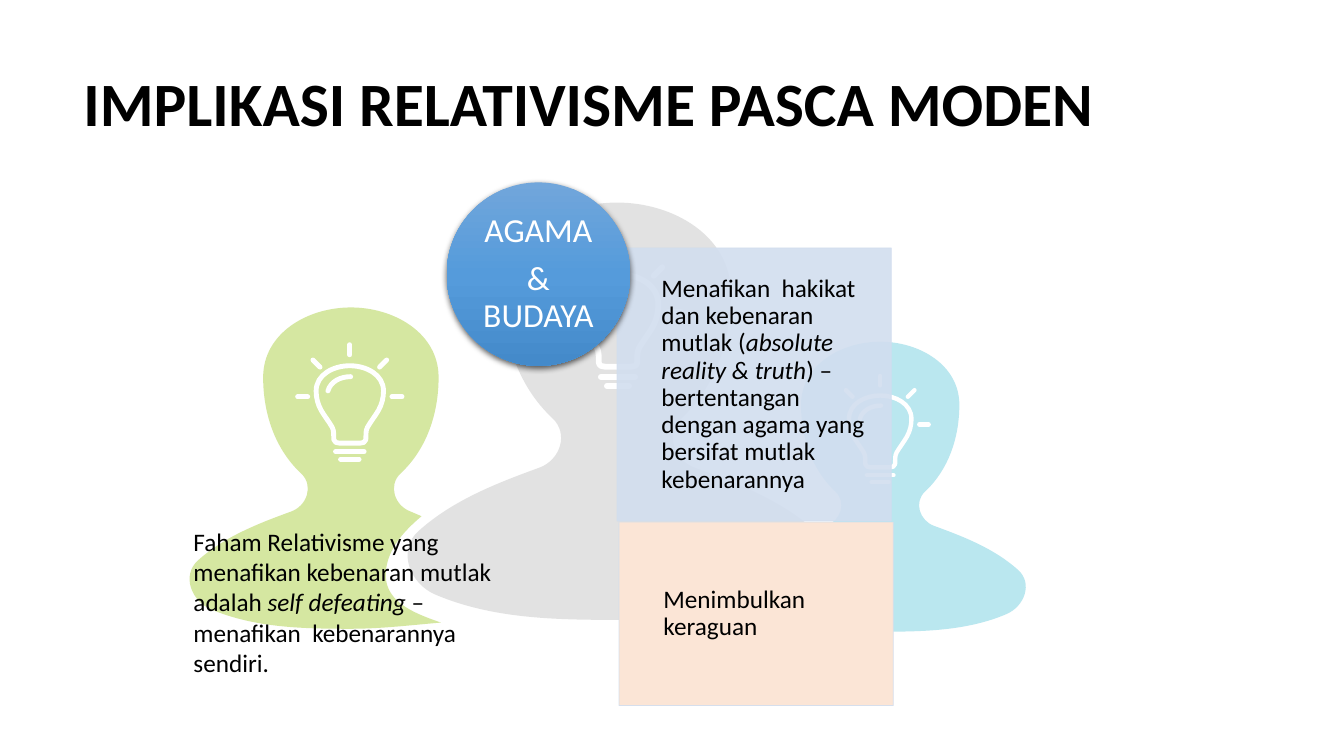
"""Build the slide on the effects of postmodern relativism."""
from math import atan2, cos, hypot, pi, radians, sin
from lxml import etree
from pptx import Presentation
from pptx.dml.color import RGBColor
from pptx.enum.shapes import MSO_SHAPE
from pptx.enum.text import MSO_ANCHOR, PP_ALIGN
from pptx.oxml import parse_xml
from pptx.oxml.ns import qn
from pptx.util import Inches, Pt

RECT, OVAL = MSO_SHAPE.RECTANGLE, MSO_SHAPE.OVAL
TOP, MID = MSO_ANCHOR.TOP, MSO_ANCHOR.MIDDLE
LEFT, CENTER = PP_ALIGN.LEFT, PP_ALIGN.CENTER
FONT = "Calibri"
NS = 'xmlns:a="http://schemas.openxmlformats.org/drawingml/2006/main"'
COLORS = {"black": "000000", "white": "FFFFFF", "gray": "3F3F3F",
          "teal": "00A8C6", "green": "8FBE00", "blue": "D2DEEF",
          "peach": "FBE5D6", "light": "71A6DB", "middle": "559BDB",
          "deep": "448ACA"}
HUES = {name: RGBColor.from_string(code) for name, code in COLORS.items()}

deck = Presentation()
deck.slide_width, deck.slide_height = Inches(13.33), Inches(7.5)
slide = deck.slides.add_slide(deck.slide_layouts[6])
shapes = slide.shapes


def trace(outlines, mid, top, scale, side=1, hue=None, clear=100, width=None):
    """Join (x, y, heading) knots by arcs, and strands by straight lines."""
    steps = []
    for strands in outlines:
        for i, strand in enumerate(strands):
            steps.append(("lnTo" if i else "moveTo", [strand[0][:2]]))
            for (x, y, head), (u, v, turn) in zip(strand, strand[1:]):
                start, end = radians(head), radians(turn)
                bend = (end - start + pi) % (2 * pi) - pi
                reach = hypot(u - x, v - y) / (3 * cos(bend / 4) ** 2)
                steps.append(("cubicBezTo", [
                    (x + reach * cos(start), y + reach * sin(start)),
                    (u - reach * cos(end), v - reach * sin(end)), (u, v)]))
        if strands[0][0][:2] == strands[-1][-1][:2]:
            steps.append(("close", []))
    steps = [(tag, [(Inches(mid + side * x * scale), Inches(top + y * scale))
                    for x, y in points]) for tag, points in steps]
    spots = [spot for tag, points in steps for spot in points]
    pen = shapes.build_freeform(*spots[0], scale=1.0)
    pen.add_line_segments(spots[1:])
    form = pen.convert_to_shape()
    form.shadow.inherit = False
    if hue:
        form.fill.solid()
        form.fill.fore_color.rgb = HUES[hue]
        tint = form._element.spPr.find(".//" + qn("a:srgbClr"))
        etree.SubElement(tint, qn("a:alpha"), val=str(clear * 1000))
        form.line.fill.background()
    else:
        form.fill.background()
        form.line.width = Pt(width)
        form.line.color.rgb = HUES["white"]
        form.line._ln.set("cap", "rnd")
    track = form._element.spPr.find(".//" + qn("a:path"))
    for old in list(track):
        track.remove(old)
    for tag, points in steps:
        step = etree.SubElement(track, qn("a:" + tag))
        for x, y in points:
            etree.SubElement(step, qn("a:pt"), x=str(x - form.left),
                             y=str(y - form.top))


def write(box, paras, size, hue="black", bold=False, anchor=MID,
          align=LEFT, pad=(0.1, 0.05, 0.1, 0.05), pitch=0.9, after=0):
    frame = shapes.add_textbox(*map(Inches, box)).text_frame
    frame.word_wrap = True
    frame.vertical_anchor = anchor
    (frame.margin_left, frame.margin_top,
     frame.margin_right, frame.margin_bottom) = map(Inches, pad)
    for i, runs in enumerate(paras):
        para = frame.add_paragraph() if i else frame.paragraphs[0]
        para.alignment, para.line_spacing = align, pitch
        para.space_after = Pt(size * after)
        for text, slant in runs:
            run = para.add_run()
            run.text = text
            run.font.name, run.font.size = FONT, Pt(size)
            run.font.bold, run.font.italic = bold, slant
            run.font.color.rgb = HUES[hue]


crown, temple, jaw = (0, 0, 0), (1.13, 0.9, 90), (0.64, 2.14, 137)
collar, arm = (0.77, 2.63, 20), (1.97, 3.26, 42)
elbow, hem = (1.8, 3.89, 157), (0, 4.14, 180)
head = [crown, temple, jaw, collar]
half = head + [arm, elbow, hem]
back = [(-x, y, -turn) for x, y, turn in reversed(half)]

gray_body = [half + back[1:]]
teal_body, green_body = [
    [head, [(*high, 140), (*deep, 88), (*low, 19)], [(*low, 175), *back]]
    for high, deep, low in [((0.81, 2.65), (0.48, 3.32), (1.21, 4.06)),
                            ((0.91, 2.69), (0.45, 3.47), (1.16, 4.06))]]
for body, mid, top, scale, side, hue, clear in [
        (gray_body, 6.12, 2.01, 1, 1, "gray", 15),
        (teal_body, 8.73, 3.39, 0.695, -1, "teal", 27),
        (green_body, 3.48, 3.05, 0.77, 1, "green", 37)]:
    trace([body], mid, top, scale, side, hue, clear)

dome, bulge, taper = (0, 0.25, 0), (0.4, 0.55, 90), (0.34, 0.78, 120)
throat, screw, foot = (0.21, 0.98, 120), (0.19, 1.13, 95), (0.12, 1.17, 180)
glass = [dome, bulge, taper, throat, screw, foot]
glass += [(-x, y, -turn) for x, y, turn in reversed(glass)]
shine = [(0.01, 0.38, 180), (-0.26, 0.55, 105)]
CORE, INNER, OUTER = 0.62, 0.5, 0.62
rays = [[(r * cos(radians(turn)), CORE + r * sin(radians(turn)), turn)
         for r in (INNER, OUTER)] for turn in range(-180, 1, 45)]
bars = [[(-x, y, 0), (x, y, 0)] for x, y in ((0.17, 1.27), (0.11, 1.36))]
bulb = [[strand] for strand in [glass, shine, *rays, *bars]]
for mid, top, scale, width in [(6.13, 2.47, 1, 4.13), (8.73, 3.73, 0.775, 3.13),
                               (3.47, 3.42, 0.835, 3.5)]:
    trace(bulb, mid, top, scale, width=width)

write((0.73, 0.36, 11.4, 1.4),
      [[("IMPLIKASI RELATIVISME PASCA MODEN", False)]], 44, bold=True)

WIDE, INDENT = 2.72, 0.44
cards = [(6.12, 2.46, 2.71, "blue", 90,
          [("Menafikan  hakikat dan kebenaran mutlak (", False),
           ("absolute reality & truth", True),
           (") – bertentangan dengan agama yang bersifat mutlak kebenarannya",
            False)]),
         (6.14, 5.18, 1.82, "peach", 100, [("Menimbulkan keraguan", False)])]
for left, top, tall, hue, clear, runs in cards:
    card = shapes.add_shape(RECT, *map(Inches, (left, top, WIDE, tall)))
    card.shadow.inherit = False
    card.fill.solid()
    card.fill.fore_color.rgb = HUES[hue]
    card.line.color.rgb = HUES["blue"]
    card.line.width = Pt(0.5)
    tints = card._element.spPr.findall(".//" + qn("a:srgbClr"))
    for tint, share in zip(tints, (clear, 90)):
        etree.SubElement(tint, qn("a:alpha"), val=str(share * 1000))
    write((left + INDENT, top, WIDE - INDENT, tall), [runs], 18,
          pad=(0, 0.14, 0.14, 0.14), after=0.35)

DISC_X, DISC_Y, DISC, INSET = 4.43, 1.81, 1.82, 0.27
disc = shapes.add_shape(OVAL, *map(Inches, (DISC_X, DISC_Y, DISC, DISC)))
disc.line.fill.background()
stops = "".join(f'<a:gs pos="{i * 50000}"><a:srgbClr val="{COLORS[name]}"/></a:gs>'
                for i, name in enumerate(("light", "middle", "deep")))
disc._element.spPr.insert(2, parse_xml(
    f'<a:gradFill {NS} rotWithShape="1"><a:gsLst>{stops}</a:gsLst>'
    '<a:lin ang="5400000" scaled="0"/></a:gradFill>'))
disc._element.spPr.append(parse_xml(
    f'<a:effectLst {NS}><a:outerShdw blurRad="{Pt(4.5)}" dist="{Pt(1.5)}" '
    f'dir="5400000" algn="ctr" rotWithShape="0"><a:srgbClr val="{COLORS["black"]}">'
    '<a:alpha val="63000"/></a:srgbClr></a:outerShdw></a:effectLst>'))
label = DISC - 2 * INSET
write((DISC_X + INSET, DISC_Y + INSET, label, label),
      [[("AGAMA", False)], [("& BUDAYA", False)]],
      24, "white", align=CENTER, pad=(0, 0, 0, 0), after=0.35)

write((1.82, 5.17, 3.45, 1.62),
      [[("Faham Relativisme yang menafikan kebenaran mutlak adalah ", False),
        ("self defeating ", True),
        ("– menafikan  kebenarannya sendiri.", False)]],
      18, anchor=TOP, pitch=1.0)

deck.save("out.pptx")
